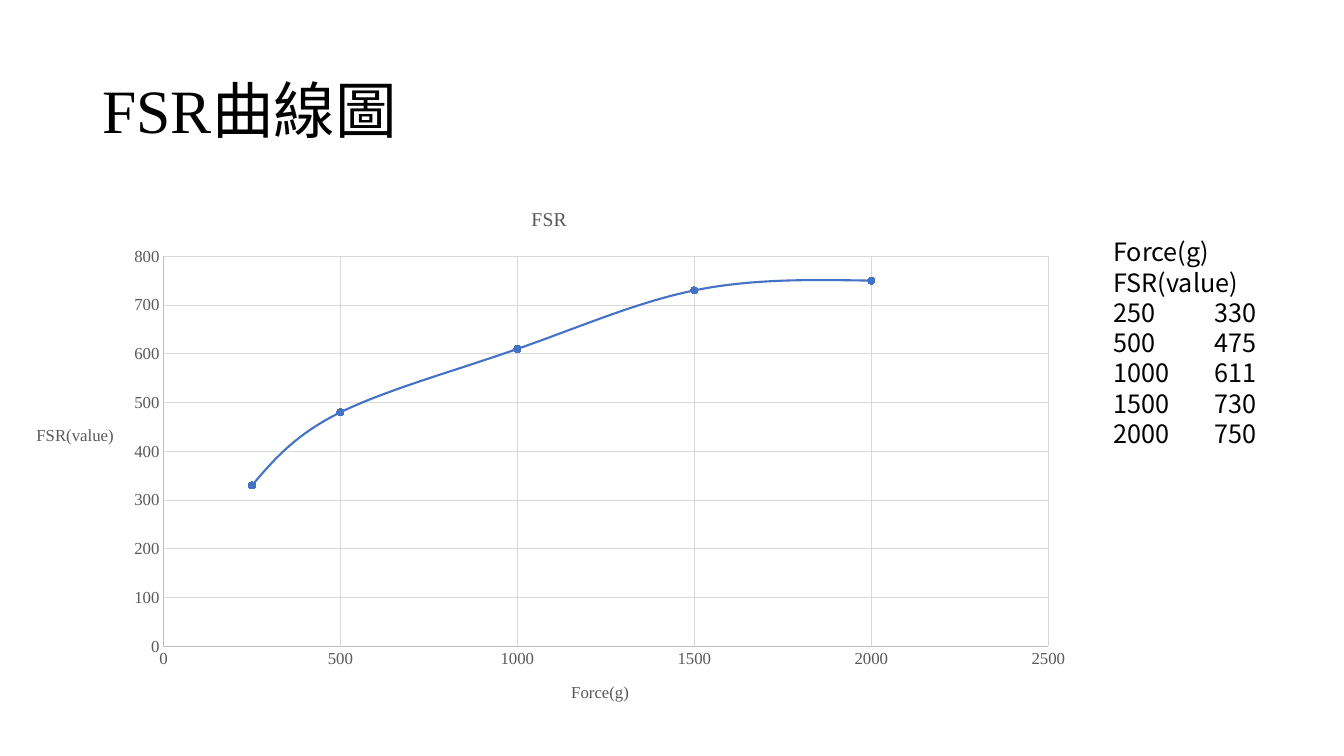
from dataclasses import dataclass

from lxml.etree import SubElement
from pptx import Presentation
from pptx.chart.data import XyChartData
from pptx.dml.color import RGBColor
from pptx.enum.chart import XL_CHART_TYPE as ChartType
from pptx.enum.chart import XL_MARKER_STYLE as MarkerStyle
from pptx.enum.chart import XL_TICK_MARK as TickMark
from pptx.enum.text import MSO_ANCHOR as Anchor
from pptx.oxml.ns import qn
from pptx.util import Cm, Pt


@dataclass(frozen=True)
class Theme:
    ink: str = "000000"
    label: str = "595959"
    axis: str = "BFBFBF"
    grid: str = "D9D9D9"
    curve: str = "4472C4"
    serif: str = "Times New Roman"
    sans: str = "Noto Sans CJK TC"
    title_size: int = 44
    body_size: int = 18
    chart_title_size: int = 14
    label_size: int = 12


@dataclass(frozen=True)
class Box:
    left: float
    top: float
    width: float
    height: float

    def lengths(self):
        return Cm(self.left), Cm(self.top), Cm(self.width), Cm(self.height)


THEME = Theme()
FORCE_LABEL = "Force(g)"
VALUE_LABEL = "FSR(value)"
READINGS = [(250, 330), (500, 475), (1000, 611), (1500, 730), (2000, 750)]


def style_font(font, size, color, name):
    font.size = Pt(size)
    font.name = name
    font.bold = False
    font.color.rgb = RGBColor.from_string(color)


def write_text(paragraph, text, *, size, color=THEME.ink, font=THEME.serif,
               spacing=None, tab_stop=None):
    run = paragraph.add_run()
    run.text = text
    style_font(run.font, size, color, font)
    SubElement(run.font._element, qn("a:ea")).set("typeface", THEME.sans)
    if spacing:
        paragraph.line_spacing = spacing
    if tab_stop:
        tabs = SubElement(paragraph._p.get_or_add_pPr(), qn("a:tabLst"))
        SubElement(tabs, qn("a:tab"), pos=str(Cm(tab_stop)), algn="l")


def add_text_frame(slide, box, anchor=Anchor.TOP):
    frame = slide.shapes.add_textbox(*box.lengths()).text_frame
    frame.word_wrap = True
    frame.vertical_anchor = anchor
    return frame


def set_line(line, color, width):
    line.color.rgb = RGBColor.from_string(color)
    line.width = Pt(width)


def place_in_chart(element, chart_box, left, top, size=None):
    layout = element.find(qn("c:layout"))
    if layout is None:
        layout = SubElement(element, qn("c:layout"))
        element.insert(0, layout)
    manual = SubElement(layout, qn("c:manualLayout"))
    settings = {"layoutTarget": "inner"} if size else {}
    settings.update(xMode="edge", yMode="edge",
                    x=left / chart_box.width, y=top / chart_box.height)
    if size:
        settings.update(w=size[0] / chart_box.width, h=size[1] / chart_box.height)
    for name, value in settings.items():
        SubElement(manual, qn(f"c:{name}")).set("val", str(value))


def style_axis(axis, title, maximum, step):
    axis.minimum_scale = 0
    axis.maximum_scale = maximum
    axis.major_unit = step
    axis.major_tick_mark = axis.minor_tick_mark = TickMark.NONE
    axis.has_major_gridlines = True
    set_line(axis.major_gridlines.format.line, THEME.grid, 0.75)
    set_line(axis.format.line, THEME.axis, 0.75)
    style_font(axis.tick_labels.font, THEME.label_size, THEME.label, THEME.serif)
    frame = axis.axis_title.text_frame
    write_text(frame.paragraphs[0], title, size=THEME.label_size, color=THEME.label)
    frame._txBody.bodyPr.set("rot", "0")
    frame._txBody.bodyPr.set("vert", "horz")


def style_series(series):
    smooth = series._element.find(qn("c:smooth"))
    if smooth is None:
        smooth = SubElement(series._element, qn("c:smooth"))
    smooth.set("val", "1")
    set_line(series.format.line, THEME.curve, 1.5)
    series.marker.style = MarkerStyle.CIRCLE
    series.marker.size = 5
    series.marker.format.fill.solid()
    series.marker.format.fill.fore_color.rgb = RGBColor.from_string(THEME.curve)
    set_line(series.marker.format.line, THEME.curve, 0.75)


def add_heading(slide, box):
    frame = add_text_frame(slide, box, Anchor.MIDDLE)
    write_text(frame.paragraphs[0], "FSR曲線圖", size=THEME.title_size, spacing=0.9)


def add_curve(slide, box):
    data = XyChartData()
    points = data.add_series("FSR")
    for force, value in READINGS:
        points.add_data_point(force, round(value, -1))
    chart = slide.shapes.add_chart(ChartType.XY_SCATTER_SMOOTH, *box.lengths(), data).chart
    style_font(chart.font, THEME.label_size, THEME.ink, THEME.serif)
    chart.has_legend = False
    chart.has_title = True
    write_text(chart.chart_title.text_frame.paragraphs[0], "FSR",
               size=THEME.chart_title_size, color=THEME.label)
    plot = chart.plots[0]
    plot.vary_by_categories = False
    style_series(plot.series[0])

    force_axis, value_axis = chart.category_axis, chart.value_axis
    style_axis(force_axis, FORCE_LABEL, 2500, 500)
    style_axis(value_axis, VALUE_LABEL, 800, 100)
    place_in_chart(force_axis.axis_title._element, box, 14.02, 12.41)
    place_in_chart(value_axis.axis_title._element, box, 0.54, 5.94)
    place_in_chart(chart._chartSpace.chart.plotArea, box, 3.82, 1.76, (22.3, 9.83))


def add_readings(slide, box):
    frame = add_text_frame(slide, box)
    for index, row in enumerate([(FORCE_LABEL, VALUE_LABEL), *READINGS]):
        paragraph = frame.add_paragraph() if index else frame.paragraphs[0]
        write_text(paragraph, "\t".join(map(str, row)), size=THEME.body_size,
                   font=THEME.sans, tab_stop=2.54)


def main():
    presentation = Presentation()
    presentation.slide_width = Cm(33.87)
    presentation.slide_height = Cm(19.05)
    slide = presentation.slides.add_slide(presentation.slide_layouts[6])
    add_heading(slide, Box(2.33, 1.01, 29.21, 3.68))
    add_curve(slide, Box(0.3, 4.7, 27.08, 13.54))
    add_readings(slide, Box(27.81, 5.84, 6.06, 5.63))
    presentation.save("out.pptx")


if __name__ == "__main__":
    main()
